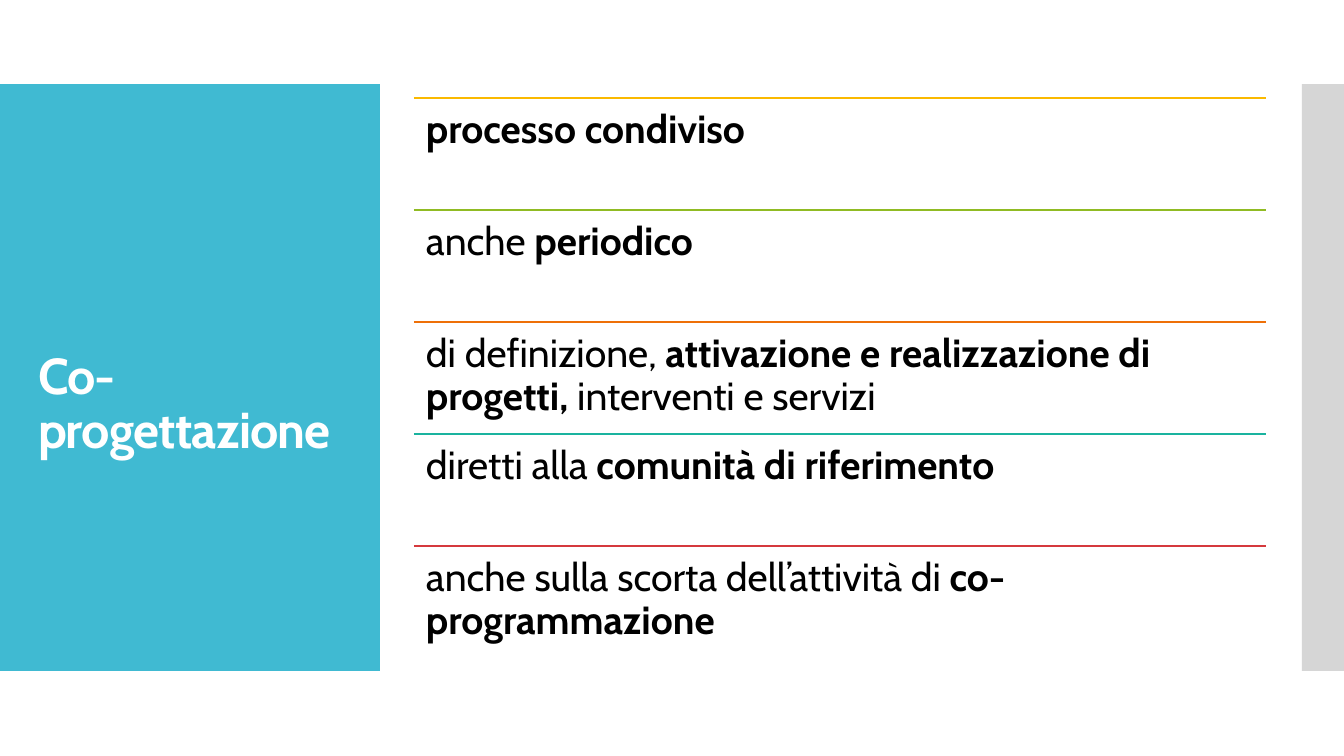
from pptx import Presentation, util as u
from pptx.dml.color import RGBColor
from pptx.enum import shapes, text
from lxml import etree

# Content: rule colour, then (wording, bold) runs
TITLE = [("Co-progettazione", True)]
ROWS = [
    ("FAB900", [("processo condiviso", True)]),
    ("90BB23", [("anche ", False), ("periodico", True)]),
    ("EE7008", [("di definizione, ", False),
                ("attivazione e realizzazione di progetti, ", True),
                ("interventi e servizi", False)]),
    ("1AB39F", [("diretti alla ", False), ("comunità di riferimento", True)]),
    ("D5393D", [("anche sulla scorta dell’attività di ", False),
                ("co-programmazione", True)]),
]

# Layout in px: left, top, width, height
PANELS = [("40BAD2", (0, 84, 380, 587)), ("D6D6D6", (1302, 84, 42, 587))]
TITLE_BOX = (28, 152, 325, 507)
ROW_LEFT, ROW_TOP, ROW_WIDTH, ROW_HEIGHT = 414, 98, 852, 112
FONT = "Cabin"
TITLE_FORMAT = {"size": u.Pt(36), "name": FONT}
ROW_FORMAT = {"size": u.Pt(28), "name": FONT}
SCALE = 914400 / 100.8
DRAWING = "http://schemas.openxmlformats.org/drawingml/2006/main"


def px(*lengths):
    return [u.Emu(round(length * SCALE)) for length in lengths]


def color(value):
    return RGBColor.from_string(value)


def add_panel(slide, fill, box):
    shape = slide.shapes.add_shape(shapes.MSO_SHAPE.RECTANGLE, *px(*box))
    shape.shadow.inherit = False
    shape.fill.solid()
    shape.fill.fore_color.rgb = color(fill)
    shape.line.fill.background()


def add_rule(slide, left, top, width, stroke):
    line = slide.shapes.add_connector(
        shapes.MSO_CONNECTOR.STRAIGHT, *px(left, top, left + width, top))
    line.line.color.rgb = color(stroke)
    line.line.width = u.Pt(0.85)
    etree.SubElement(line._element.spPr, f"{{{DRAWING}}}effectLst")


def add_text(slide, box, runs, font_format, ink, margins, anchor, spacing=0):
    frame = slide.shapes.add_textbox(*px(*box)).text_frame
    horizontal, vertical = px(*margins)
    frame_format = {
        "word_wrap": True, "vertical_anchor": anchor,
        "margin_left": horizontal, "margin_right": horizontal,
        "margin_top": vertical, "margin_bottom": vertical,
    }
    for name, value in frame_format.items():
        setattr(frame, name, value)
    paragraph = frame.paragraphs[0]
    paragraph.line_spacing = 0.9
    for wording, bold in runs:
        run = paragraph.add_run()
        run.text = wording
        for name, value in {**font_format, "bold": bold}.items():
            setattr(run.font, name, value)
        run.font.color.rgb = color(ink)
        if spacing:
            run._r.get_or_add_rPr().set("spc", str(spacing))


def main():
    presentation = Presentation()
    presentation.slide_width, presentation.slide_height = px(1344, 756)
    slide = presentation.slides.add_slide(presentation.slide_layouts[6])

    # Side panels and title
    for fill, box in PANELS:
        add_panel(slide, fill, box)
    add_text(slide, TITLE_BOX, TITLE, TITLE_FORMAT, "FFFFFF", (10, 5),
             text.MSO_ANCHOR.MIDDLE, spacing=-60)

    # Ruled rows
    for index, (stroke, runs) in enumerate(ROWS):
        top = ROW_TOP + index * ROW_HEIGHT
        add_rule(slide, ROW_LEFT, top, ROW_WIDTH, stroke)
        add_text(slide, (ROW_LEFT, top, ROW_WIDTH, ROW_HEIGHT), runs,
                 ROW_FORMAT, "000000", (12, 12), text.MSO_ANCHOR.TOP)

    presentation.save("out.pptx")


if __name__ == "__main__":
    main()
